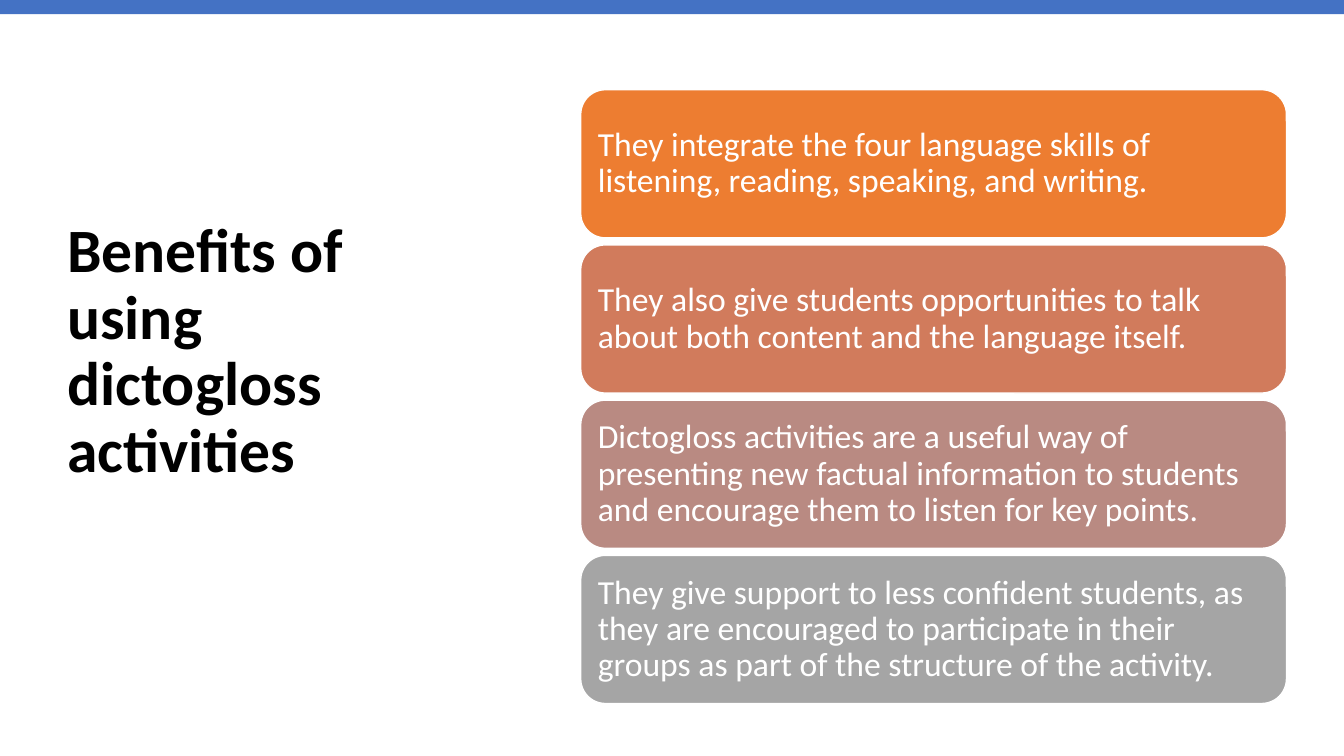
from pptx import Presentation
from pptx import util as u
from pptx.dml.color import RGBColor
from pptx.enum import shapes, text

PX = 9144
WIDTH, HEIGHT = 1333, 750


def colour(value):
    """Turn a hex string into a colour."""
    return RGBColor.from_string(value)


class SlideBuilder:
    """Hold the style and the current slide."""

    font = "Calibri"
    line_spacing = 0.9

    def __init__(self, slide):
        """Keep the slide to draw on."""
        self.slide = slide

    def set_words(self, frame, words, size, ink, bold=False):
        """Put one left-aligned paragraph in a text frame, centred vertically."""
        frame.word_wrap = True
        frame.vertical_anchor = text.MSO_ANCHOR.MIDDLE
        frame.text = words
        paragraph = frame.paragraphs[0]
        paragraph.alignment = text.PP_ALIGN.LEFT
        paragraph.line_spacing = self.line_spacing
        paragraph.font.name = self.font
        paragraph.font.size = u.Pt(size)
        paragraph.font.bold = bold
        paragraph.font.color.rgb = colour(ink)

    def heading(self, box, words, lift):
        """Add the slide heading, raised by a deeper bottom margin."""
        frame = self.slide.shapes.add_textbox(*[n * PX for n in box]).text_frame
        frame.margin_bottom = lift * PX
        self.set_words(frame, words, 44, "000000", bold=True)

    def block(self, kind, box, fill, outline=None):
        """Add a filled preset shape and return it."""
        shape = self.slide.shapes.add_shape(kind, *[n * PX for n in box])
        shape.shadow.inherit = False
        shape.fill.solid()
        shape.fill.fore_color.rgb = colour(fill)
        if outline:
            shape.line.color.rgb = colour(outline)
            shape.line.width = u.Pt(1)
        else:
            shape.line.fill.background()
        return shape

    def card(self, box, words, fill):
        """Add a rounded card with its text."""
        frame = self.block(shapes.MSO_SHAPE.ROUNDED_RECTANGLE, box, fill, "FFFFFF").text_frame
        frame.margin_left = frame.margin_right = 10 * PX
        frame.margin_top = frame.margin_bottom = 10 * PX
        self.set_words(frame, words, 24, "FFFFFF")


BENEFITS = [
    ("They integrate the four language skills of listening, reading, speaking, and writing.", "ED7D31"),
    ("They also give students opportunities to talk about both content and the language itself.", "D17B5C"),
    ("Dictogloss activities are a useful way of presenting new factual information to students "
     "and encourage them to listen for key points.", "B98A82"),
    ("They give support to less confident students, as they are encouraged to participate in their "
     "groups as part of the structure of the activity.", "A5A5A5"),
]


def main():
    """Build and save the slide."""
    deck = Presentation()
    deck.slide_width, deck.slide_height = WIDTH * PX, HEIGHT * PX
    builder = SlideBuilder(deck.slides.add_slide(deck.slide_layouts[6]))
    builder.heading((57, 68, 416, 602), "Benefits of using dictogloss activities", 43)
    builder.block(shapes.MSO_SHAPE.RECTANGLE, (0, 0, WIDTH, 14), "4472C4")
    card_top, card_pitch = 89, 154
    for row, (benefit, fill) in enumerate(BENEFITS):
        builder.card((576, card_top + row * card_pitch, 700, 147), benefit, fill)
    deck.save("out.pptx")


if __name__ == "__main__":
    main()
